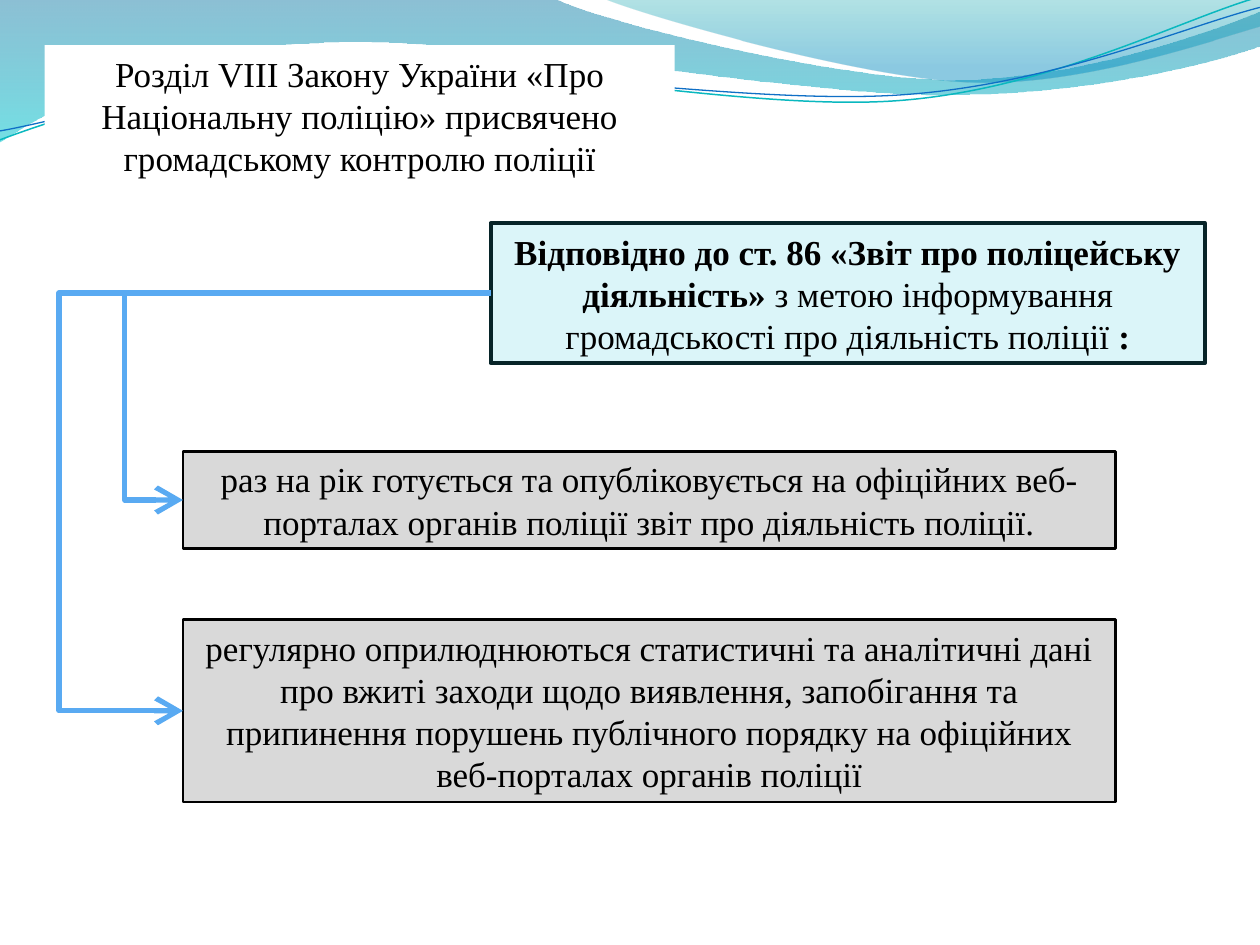
"""Build a slide on public reporting by the police under Section VIII of the law."""
from lxml import etree
from pptx import Presentation
from pptx.dml.color import RGBColor
from pptx.enum import shapes, text
from pptx.oxml.ns import qn
from pptx.util import Cm, Pt

COLORS = {
    "white": "FFFFFF", "black": "000000", "report": "DBF5F9", "report_edge": "072428",
    "duty": "D9D9D9", "arrow": "59AAF2", "teal": "0AB8BF", "blue": "0F6FC6",
    "deep": "0074A1", "aqua": "00C6CF", "sea": "00A1A9", "sky": "008BBF",
}

HEADING = [("Розділ VIII Закону України «Про Національну поліцію» "
            "присвячено громадському контролю поліції", False)]
REPORT = [("Відповідно до ст. 86 «Звіт про поліцейську діяльність» ", True),
          ("з метою інформування громадськості про діяльність поліції ", False),
          (":", True)]
DUTIES = [
    {"runs": [("раз на рік готується та опубліковується на офіційних веб-порталах "
               "органів поліції звіт про діяльність поліції.", False)],
     "top": 9.1, "height": 1.96, "bend": 2.52},
    {"runs": [("регулярно оприлюднюються статистичні та аналітичні дані про вжиті заходи "
               "щодо виявлення, запобігання та припинення порушень публічного порядку "
               "на офіційних веб-порталах органів поліції", False)],
     "top": 12.49, "height": 3.68, "bend": 1.19},
]
HEADING_AREA = (0.9, 0.91, 12.7, 2.82)
REPORT_AREA = (9.89, 4.5, 14.4, 2.82)
DUTY_LEFT, DUTY_WIDTH = 3.69, 18.8

WAVES = [
    {"start": (0, 0), "stops": [(0, "deep", 45), (1, "aqua", 55)],
     "segments": [(11.18, -0.03), (12.09, 0.43, 16.87, 1.6, 19.25, 1.6),
                  (21.67, 1.6, 24.33, 0.66, 25.4, 0.23), (25.43, 0.91),
                  (24.97, 1.12, 22.1, 1.93, 18.95, 1.91),
                  (15.8, 1.91, 9.7, 0.71, 6.53, 0.86),
                  (3.28, 0.91, 1.17, 2.11, -0.03, 2.87)]},
    {"start": (12.17, -0.03), "stops": [(0, "sea", 30), (0.8, "sky", 45)],
     "segments": [(12.93, 0.3, 17.32, 1.57, 19.53, 1.65),
                  (21.74, 1.75, 24.41, 0.81, 25.4, 0.53), (25.4, 0)]},
    {"start": (0, 2.82), "line": ("teal", 0.85),
     "segments": [(1.22, 2.36, 4.01, 1.45, 7.04, 1.32),
                  (10.03, 1.19, 15.06, 2.26, 18.11, 2.03),
                  (21.16, 1.8, 23.83, 0.38, 25.35, -0.05)]},
    {"start": (0, 2.64), "line": ("blue", 0.75),
     "segments": [(1.19, 2.44, 4.17, 1.55, 7.19, 1.42),
                  (10.24, 1.3, 15.16, 2.13, 18.21, 1.91),
                  (21.23, 1.7, 23.9, 0.53, 25.4, 0.15)]},
]

FRAME = {"word_wrap": True, "auto_size": text.MSO_AUTO_SIZE.NONE,
         "vertical_anchor": text.MSO_ANCHOR.MIDDLE}
FONT = {"name": "Times New Roman", "size": Pt(20)}


def rgb(name):
    return RGBColor.from_string(COLORS[name])


def apply(target, values):
    for name, value in values.items():
        setattr(target, name, value)


def set_line(line, color, width):
    line.color.rgb = rgb(color)
    line.width = Pt(width)


def set_fill(shape, color):
    shape.fill.solid()
    shape.fill.fore_color.rgb = rgb(color)


def write(shape, runs):
    apply(shape.text_frame, FRAME)
    paragraph = shape.text_frame.paragraphs[0]
    paragraph.alignment = text.PP_ALIGN.CENTER
    for words, bold in runs:
        run = paragraph.add_run()
        run.text = words
        apply(run.font, {**FONT, "bold": bold})
        run.font.color.rgb = rgb("black")


def bend_lines(shape, segments):
    straight = list(shape.element.iter(qn("a:lnTo")))
    for line, segment in zip(straight, segments):
        if len(segment) == 2:
            continue
        curve = etree.Element(qn("a:cubicBezTo"))
        for x, y in zip(segment[::2], segment[1::2]):
            etree.SubElement(curve, qn("a:pt"), x=str(Cm(x) - shape.left),
                             y=str(Cm(y) - shape.top))
        line.getparent().replace(line, curve)


def add_wave(slide, wave):
    ends = [(Cm(segment[-2]), Cm(segment[-1])) for segment in wave["segments"]]
    builder = slide.shapes.build_freeform(*map(Cm, wave["start"]))
    builder.add_line_segments(ends, close="stops" in wave)
    shape = builder.convert_to_shape()
    bend_lines(shape, wave["segments"])
    shape.shadow.inherit = False
    if "line" in wave:
        shape.fill.background()
        set_line(shape.line, *wave["line"])
        return
    shape.line.fill.background()
    shape.fill.gradient()
    shape.fill.gradient_angle = 270
    for stop, (position, color, _) in zip(shape.fill.gradient_stops, wave["stops"]):
        stop.position = position
        stop.color.rgb = rgb(color)
    for color, (_, _, opacity) in zip(shape.element.iter(qn("a:srgbClr")), wave["stops"]):
        etree.SubElement(color, qn("a:alpha"), val=str(opacity * 1000))


def add_box(slide, area, runs, fill, edge, width):
    box = slide.shapes.add_shape(shapes.MSO_SHAPE.RECTANGLE, *map(Cm, area))
    box.shadow.inherit = False
    set_fill(box, fill)
    set_line(box.line, edge, width)
    write(box, runs)
    return box


def add_arrow(slide, report, duty, bend):
    arrow = slide.shapes.add_connector(shapes.MSO_CONNECTOR.ELBOW, 0, 0, 0, 0)
    arrow.begin_connect(report, 1)
    arrow.end_connect(duty, 1)
    set_line(arrow.line, "arrow", 3)
    ratio = (report.left - Cm(bend)) / (report.left - duty.left)
    guides = arrow.element.spPr.find(qn("a:prstGeom")).get_or_add_avLst()
    etree.SubElement(guides, qn("a:gd"), name="adj1", fmla=f"val {round(ratio * 100000)}")
    line = arrow.element.spPr.find(qn("a:ln"))
    etree.SubElement(line, qn("a:tailEnd"), type="arrow", w="lg", len="lg")
    etree.SubElement(arrow.element.spPr, qn("a:effectLst"))


def main():
    deck = Presentation()
    deck.slide_width, deck.slide_height = Cm(25.4), Cm(19.05)
    slide = deck.slides.add_slide(deck.slide_layouts[5])
    for wave in WAVES:
        add_wave(slide, wave)

    heading = slide.shapes.title
    apply(heading, dict(zip(("left", "top", "width", "height"), map(Cm, HEADING_AREA))))
    set_fill(heading, "white")
    write(heading, HEADING)
    slide.shapes.element.append(heading.element)

    report = add_box(slide, REPORT_AREA, REPORT, "report", "report_edge", 2.25)
    for duty in DUTIES:
        area = (DUTY_LEFT, duty["top"], DUTY_WIDTH, duty["height"])
        box = add_box(slide, area, duty["runs"], "duty", "black", 1.5)
        add_arrow(slide, report, box, duty["bend"])
    deck.save("out.pptx")


if __name__ == "__main__":
    main()
